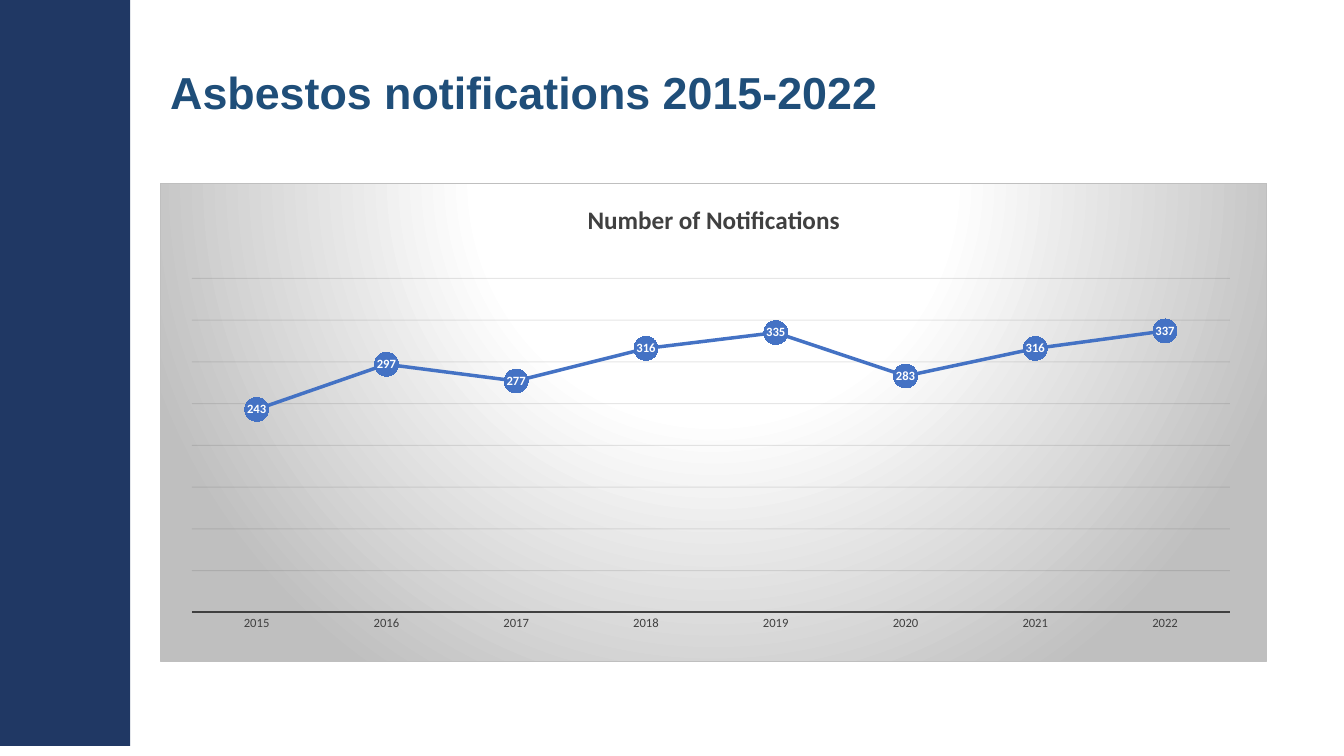
from lxml import etree
from pptx import Presentation
from pptx.chart.data import CategoryChartData
from pptx.dml.color import RGBColor
from pptx.enum.chart import XL_CHART_TYPE, XL_LABEL_POSITION, XL_MARKER_STYLE, XL_TICK_MARK
from pptx.enum.shapes import MSO_SHAPE
from pptx.enum.text import MSO_ANCHOR
from pptx.oxml import parse_xml
from pptx.oxml.ns import nsdecls, qn
from pptx.util import Cm, Pt

RECTANGLE = MSO_SHAPE.RECTANGLE
LINE_MARKERS = XL_CHART_TYPE.LINE_MARKERS
LABEL_CENTER = XL_LABEL_POSITION.CENTER
CIRCLE = XL_MARKER_STYLE.CIRCLE
NO_TICK = XL_TICK_MARK.NONE
TOP = MSO_ANCHOR.TOP

NAVY, TITLE_BLUE, SERIES_BLUE = "203864", "1F4E79", "4472C4"
WHITE, SILVER, CHARCOAL, BLACK = "FFFFFF", "BFBFBF", "404040", "000000"
GRID_COLOR = "0D0D0D"
HEADING_FONT, CHART_FONT = "Arial", "Calibri"

CHART_TITLE = "Number of Notifications"
NOTIFICATIONS = {
    "2015": 243, "2016": 297, "2017": 277, "2018": 316,
    "2019": 335, "2020": 283, "2021": 316, "2022": 337,
}
PLOT_AREA = {"x": 0.028, "y": 0.199, "w": 0.939, "h": 0.698}


def color(hex_string):
    return RGBColor.from_string(hex_string)


def style_font(font, name, size, hex_string, bold=False):
    font.name = name
    font.size = Pt(size)
    font.bold = bold
    font.color.rgb = color(hex_string)


def style_line(line, hex_string, width):
    line.color.rgb = color(hex_string)
    line.width = Pt(width)


def fill_solid(fill, hex_string):
    fill.solid()
    fill.fore_color.rgb = color(hex_string)


def add_sidebar(slide, left, top, width, height):
    sidebar = slide.shapes.add_shape(RECTANGLE, left, top, width, height)
    sidebar.shadow.inherit = False
    fill_solid(sidebar.fill, NAVY)
    sidebar.line.fill.background()


def add_heading(slide, left, top, width, height):
    frame = slide.shapes.add_textbox(left, top, width, height).text_frame
    frame.word_wrap = True
    frame.vertical_anchor = TOP
    paragraph = frame.paragraphs[0]
    paragraph.line_spacing = 0.9
    run = paragraph.add_run()
    run.text = "Asbestos notifications 2015-2022"
    style_font(run.font, HEADING_FONT, 32, TITLE_BLUE, bold=True)


def set_chart_background(chart):
    stops = "".join(
        f'<a:gs pos="{percent * 1000}"><a:srgbClr val="{stop}"/></a:gs>'
        for percent, stop in ((0, WHITE), (39, WHITE), (100, SILVER))
    )
    background = parse_xml(
        f'<c:spPr {nsdecls("c", "a")}><a:gradFill><a:gsLst>{stops}</a:gsLst>'
        '<a:path path="circle">'
        '<a:fillToRect l="50000" t="-80000" r="50000" b="180000"/></a:path></a:gradFill>'
        f'<a:ln w="{Pt(0.75)}"><a:solidFill><a:srgbClr val="{SILVER}"/></a:solidFill></a:ln>'
        "</c:spPr>"
    )
    chart.element.find(qn("c:chart")).addnext(background)


def set_plot_layout(chart):
    plot_area = chart.element.find(qn("c:chart")).find(qn("c:plotArea"))
    for layout in plot_area.findall(qn("c:layout")):
        plot_area.remove(layout)
    modes = '<c:xMode val="edge"/><c:yMode val="edge"/>'
    sizes = "".join(f'<c:{side} val="{share}"/>' for side, share in PLOT_AREA.items())
    plot_area.insert(0, parse_xml(
        f'<c:layout {nsdecls("c")}><c:manualLayout><c:layoutTarget val="inner"/>'
        f"{modes}{sizes}</c:manualLayout></c:layout>"
    ))


def style_axes(chart):
    years = chart.category_axis
    years.major_tick_mark = years.minor_tick_mark = NO_TICK
    years.has_major_gridlines = False
    style_line(years.format.line, CHARCOAL, 1.5)
    style_font(years.tick_labels.font, CHART_FONT, 9, CHARCOAL)

    values = chart.value_axis
    values.visible = False
    values.minimum_scale, values.maximum_scale, values.major_unit = 0, 400, 50
    values.has_major_gridlines = True
    gridlines = values.major_gridlines
    style_line(gridlines.format.line, GRID_COLOR, 0.75)
    for grid_color in gridlines.format.line.fill._xPr.iter(qn("a:srgbClr")):
        etree.SubElement(grid_color, qn("a:alpha")).set("val", "10000")


def style_series(plot):
    series = plot.series[0]
    series.smooth = False
    style_line(series.format.line, SERIES_BLUE, 2.5)
    series.marker.style = CIRCLE
    series.marker.size = 17
    fill_solid(series.marker.format.fill, SERIES_BLUE)
    series.marker.format.line.fill.background()
    labels = series.data_labels
    labels.show_value = True
    labels.position = LABEL_CENTER
    style_font(labels.font, CHART_FONT, 9, WHITE, bold=True)


def add_notifications_chart(slide, left, top, width, height):
    data = CategoryChartData()
    data.categories = list(NOTIFICATIONS)
    data.add_series(CHART_TITLE, list(NOTIFICATIONS.values()))
    chart = slide.shapes.add_chart(LINE_MARKERS, left, top, width, height, data).chart
    style_font(chart.font, CHART_FONT, 10, BLACK)
    chart.has_legend = False
    chart.has_title = True
    run = chart.chart_title.text_frame.paragraphs[0].add_run()
    run.text = CHART_TITLE
    style_font(run.font, CHART_FONT, 18, CHARCOAL, bold=True)
    plot = chart.plots[0]
    plot.vary_by_categories = False
    style_axes(chart)
    style_series(plot)
    set_plot_layout(chart)
    set_chart_background(chart)


def main():
    presentation = Presentation()
    presentation.slide_width, presentation.slide_height = Cm(33.87), Cm(19.05)
    slide = presentation.slides.add_slide(presentation.slide_layouts[6])
    content_left = Cm(4.04)
    add_sidebar(slide, Cm(-0.05), Cm(0), Cm(3.33), Cm(18.8))
    add_heading(slide, content_left, Cm(1.65), Cm(29.21), Cm(2.77))
    add_notifications_chart(slide, content_left, Cm(4.6), Cm(27.89), Cm(12.09))
    presentation.save("out.pptx")


if __name__ == "__main__":
    main()
